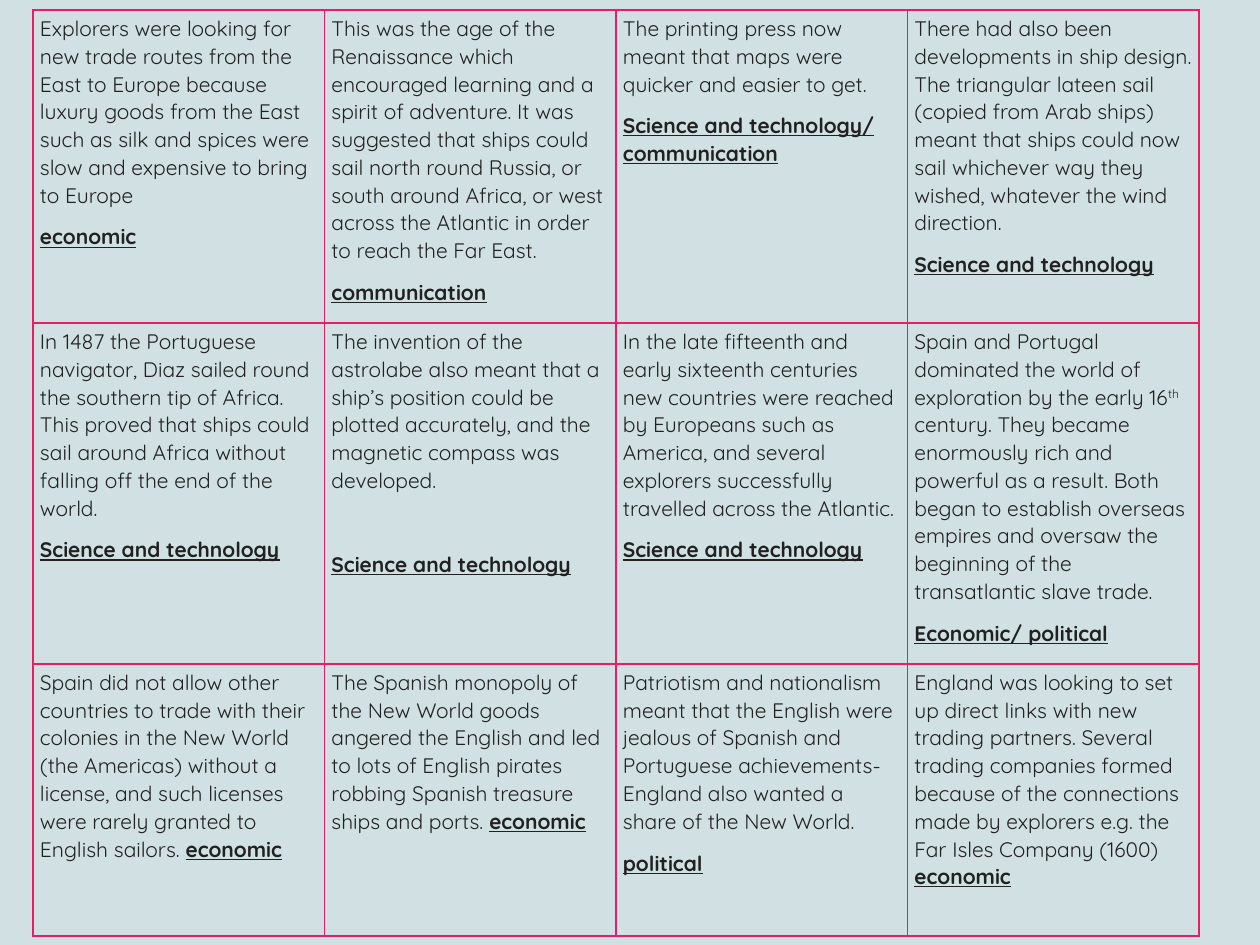
from itertools import product

from lxml.etree import SubElement
from pptx import Presentation
from pptx.dml.color import RGBColor
from pptx.oxml.ns import qn
from pptx.util import Emu, Pt

SCALE = 914400 // 126
FONT = "Quicksand"
TEXT_COLOR = "212121"
BORDER_COLOR = "E91D63"
BACKGROUND = "D0E0E3"
ROW_HEIGHTS = [313, 341, 272]
SCIENCE = "Science and technology"


def px(length):
    return Emu(length * SCALE)


def color(value):
    return RGBColor.from_string(value)


def body(text):
    return {"text": text}


def label(text):
    return {"text": text, "bold": True}


CAUSES = [
    [
        [[body("Explorers were looking for new trade routes from the East to Europe because luxury goods from the East such as silk and spices were slow and expensive to bring to Europe")],
         [label("economic")]],
        [[body("This was the age of the Renaissance which encouraged learning and a spirit of adventure. It was suggested that ships could sail north round Russia, or south around Africa, or west across the Atlantic in order to reach the Far East.")],
         [label("communication")]],
        [[body("The printing press now meant that maps were quicker and easier to get.")],
         [label("Science and technology/ communication")]],
        [[body("There had also been developments in ship design. The triangular lateen sail (copied from Arab ships) meant that ships could now sail whichever way they wished, whatever the wind direction.")],
         [label(SCIENCE)]],
    ],
    [
        [[body("In 1487 the Portuguese navigator, Diaz sailed round the southern tip of Africa. This proved that ships could sail around Africa without falling off the end of the world.")],
         [label(SCIENCE)]],
        [[body("The invention of the astrolabe also meant that a ship’s position could be plotted accurately, and the magnetic compass was developed.")],
         [{"text": SCIENCE, "bold": True, "space_before": 24}]],
        [[body("In the late fifteenth and early sixteenth centuries new countries were reached by Europeans such as America, and several explorers successfully travelled across the Atlantic.")],
         [label(SCIENCE)]],
        [[body("Spain and Portugal dominated the world of exploration by the early 16"),
          {"text": "th", "baseline": 30},
          body(" century. They became enormously rich and powerful as a result. Both began to establish overseas empires and oversaw the beginning of the transatlantic slave trade.")],
         [label("Economic/ political")]],
    ],
    [
        [[body("Spain did not allow other countries to trade with their colonies in the New World (the Americas) without a license, and such licenses were rarely granted to English sailors. "),
          label("economic")]],
        [[body("The Spanish monopoly of the New World goods angered the English and led to lots of English pirates robbing Spanish treasure ships and ports. "),
          label("economic")]],
        [[body("Patriotism and nationalism meant that the English were jealous of Spanish and Portuguese achievements- England also wanted a share of the New World.")],
         [label("political")]],
        [[body("England was looking to set up direct links with new trading partners. Several trading companies formed because of the connections made by explorers e.g. the Far Isles Company (1600) "),
          label("economic")]],
    ],
]


def add_text(paragraph, text, bold=False, baseline=0, space_before=0):
    run = paragraph.add_run()
    run.text = text
    run.font.name = FONT
    run.font.size = Pt(12)
    run.font.bold = run.font.underline = bold
    run.font.color.rgb = color(TEXT_COLOR)
    if baseline:
        run.font._element.set("baseline", str(baseline * 1000))
    if space_before:
        paragraph.space_before = Pt(space_before)


def add_borders(cell):
    properties = cell._tc.get_or_add_tcPr()
    for side in ("lnL", "lnR", "lnT", "lnB"):
        line = SubElement(properties, qn(f"a:{side}"), w=str(Pt(1)))
        fill = SubElement(line, qn("a:solidFill"))
        SubElement(fill, qn("a:srgbClr"), val=BORDER_COLOR)


def fill_cell(cell, paragraphs):
    add_borders(cell)
    cell.fill.background()
    cell.margin_left = cell.margin_right = px(7)
    cell.margin_top = cell.margin_bottom = px(4)
    frame = cell.text_frame
    for index, parts in enumerate(paragraphs):
        paragraph = frame.add_paragraph() if index else frame.paragraphs[0]
        paragraph.line_spacing = 1.06
        paragraph.space_after = Pt(8)
        for part in parts:
            add_text(paragraph, **part)


def add_causes_table(slide, left, top, width, row_heights):
    rows, columns = len(CAUSES), len(CAUSES[0])
    shape = slide.shapes.add_table(
        rows, columns, px(left), px(top), px(width), px(sum(row_heights)))
    table = shape.table
    table.first_row = table.horz_banding = False
    for row, height in zip(table.rows, row_heights):
        row.height = px(height)
    for row, column in product(range(rows), range(columns)):
        fill_cell(table.cell(row, column), CAUSES[row][column])


def main():
    presentation = Presentation()
    presentation.slide_width = px(1260)
    presentation.slide_height = px(945)
    slide = presentation.slides.add_slide(presentation.slide_layouts[6])
    slide.background.fill.solid()
    slide.background.fill.fore_color.rgb = color(BACKGROUND)
    add_causes_table(slide, 33, 10, 1166, ROW_HEIGHTS)
    presentation.save("out.pptx")


if __name__ == "__main__":
    main()
